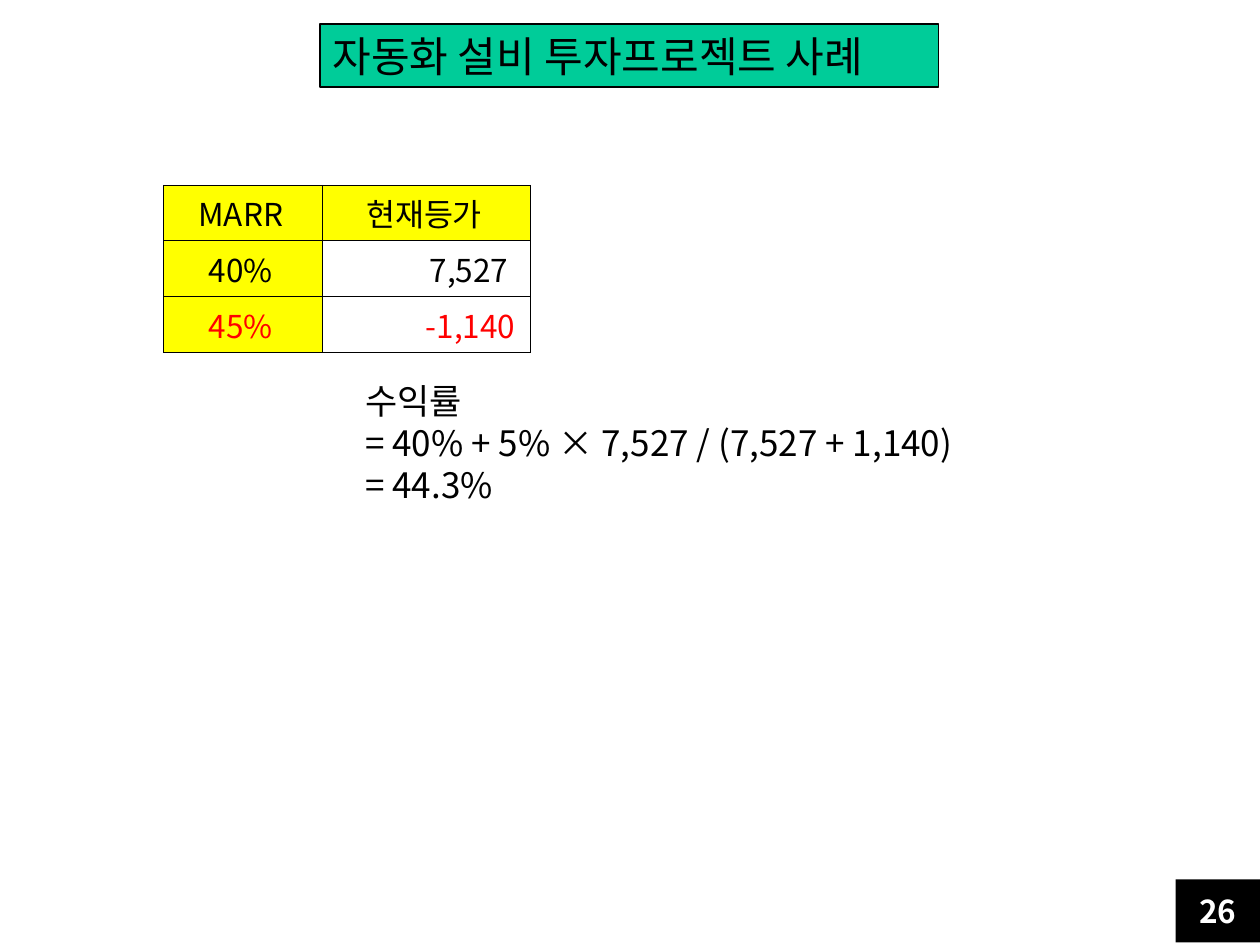
from dataclasses import dataclass
from typing import Optional

from lxml.etree import SubElement
from pptx import Presentation
from pptx.dml.color import RGBColor
from pptx.enum.shapes import MSO_SHAPE
from pptx.enum.text import MSO_ANCHOR, PP_ALIGN
from pptx.oxml.ns import qn
from pptx.util import Inches, Pt

FONT = "Noto Sans CJK KR"
COLORS = {"black": "000000", "white": "FFFFFF", "yellow": "FFFF00",
          "red": "FF0000", "green": "00CC99"}


@dataclass
class Box:
    at: tuple
    lines: list
    size: int
    color: str = "black"
    fill: Optional[str] = None
    line: Optional[str] = None
    align: PP_ALIGN = PP_ALIGN.LEFT
    anchor: MSO_ANCHOR = MSO_ANCHOR.TOP
    bold: bool = False
    spacing: Optional[float] = 1.2


@dataclass
class Row:
    marr: str
    worth: str
    color: str = "black"
    header: bool = False


BOXES = [
    Box((2.8, 2.96, 5.02, 1.11),
        ["수익률", "= 40% + 5% × 7,527 / (7,527 + 1,140)", "= 44.3%"], 20),
    Box((2.54, 0.19, 4.91, 0.5), ["자동화 설비 투자프로젝트 사례"], 24,
        fill="green", line="black"),
    Box((9.33, 6.98, 0.67, 0.5), ["26"], 18, "white", "black",
        align=PP_ALIGN.CENTER, anchor=MSO_ANCHOR.MIDDLE, bold=True, spacing=None),
]
ROWS = [Row("MARR", "현재등가", header=True), Row("40%", "7,527 "),
        Row("45%", "-1,140", "red")]
COL_WIDTHS = (1.26, 1.65)
ROW_HEIGHT = 0.38


def rgb(name: str) -> RGBColor:
    return RGBColor.from_string(COLORS[name])


def set_paragraph(p, text: str, size: int, color: str, align: PP_ALIGN,
                  bold: bool = False) -> None:
    p.text, p.alignment = text, align
    p.font.name, p.font.size, p.font.bold = FONT, Pt(size), bold
    p.font.color.rgb = rgb(color)
    for r in p.runs:
        SubElement(r.font._element, qn("a:ea"), typeface=FONT)


def add_box(s, box: Box) -> None:
    at = [Inches(v) for v in box.at]
    if box.fill:
        sp = s.shapes.add_shape(MSO_SHAPE.RECTANGLE, *at)
        sp.shadow.inherit = False
        sp.fill.solid()
        sp.fill.fore_color.rgb = rgb(box.fill)
        if box.line:
            sp.line.color.rgb, sp.line.width = rgb(box.line), Pt(0.75)
        else:
            sp.line.fill.background()
    else:
        sp = s.shapes.add_textbox(*at)
    tf = sp.text_frame
    tf.word_wrap, tf.vertical_anchor = True, box.anchor
    for i, text in enumerate(box.lines):
        p = tf.add_paragraph() if i else tf.paragraphs[0]
        set_paragraph(p, text, box.size, box.color, box.align, box.bold)
        if box.spacing:
            p.line_spacing = Pt(box.size * box.spacing)


def set_borders(cell) -> None:
    tcPr = cell._tc.get_or_add_tcPr()
    for i, side in enumerate(("lnL", "lnR", "lnT", "lnB")):
        ln = SubElement(tcPr, qn(f"a:{side}"), w=str(Pt(0.5)))
        fill = SubElement(ln, qn("a:solidFill"))
        SubElement(fill, qn("a:srgbClr"), val=COLORS["black"])
        tcPr.insert(i, ln)


def set_cell(cell, text: str, color: str, align: PP_ALIGN, filled: bool) -> None:
    cell.margin_left, cell.margin_right = Inches(0.08), Inches(0.12)
    cell.margin_top = cell.margin_bottom = Inches(0.04)
    cell.vertical_anchor = MSO_ANCHOR.BOTTOM
    if filled:
        cell.fill.solid()
        cell.fill.fore_color.rgb = rgb("yellow")
    else:
        cell.fill.background()
    set_borders(cell)
    set_paragraph(cell.text_frame.paragraphs[0], text, 18, color, align)


def add_worth_table(s) -> None:
    table = s.shapes.add_table(
        len(ROWS), len(COL_WIDTHS), Inches(1.3), Inches(1.47),
        Inches(sum(COL_WIDTHS)), Inches(ROW_HEIGHT * len(ROWS))).table
    for col, width in zip(table.columns, COL_WIDTHS):
        col.width = Inches(width)
    for i, row in enumerate(ROWS):
        table.rows[i].height = Inches(ROW_HEIGHT)
        align = PP_ALIGN.CENTER if row.header else PP_ALIGN.RIGHT
        set_cell(table.cell(i, 0), row.marr, row.color, PP_ALIGN.CENTER, True)
        set_cell(table.cell(i, 1), row.worth, row.color, align, row.header)


def main() -> None:
    """Build the rate-of-return slide and save it."""
    prs = Presentation()
    prs.slide_width, prs.slide_height = Inches(10), Inches(7.5)
    s = prs.slides.add_slide(prs.slide_layouts[6])
    add_worth_table(s)
    for box in BOXES:
        add_box(s, box)
    prs.save("out.pptx")


if __name__ == "__main__":
    main()
